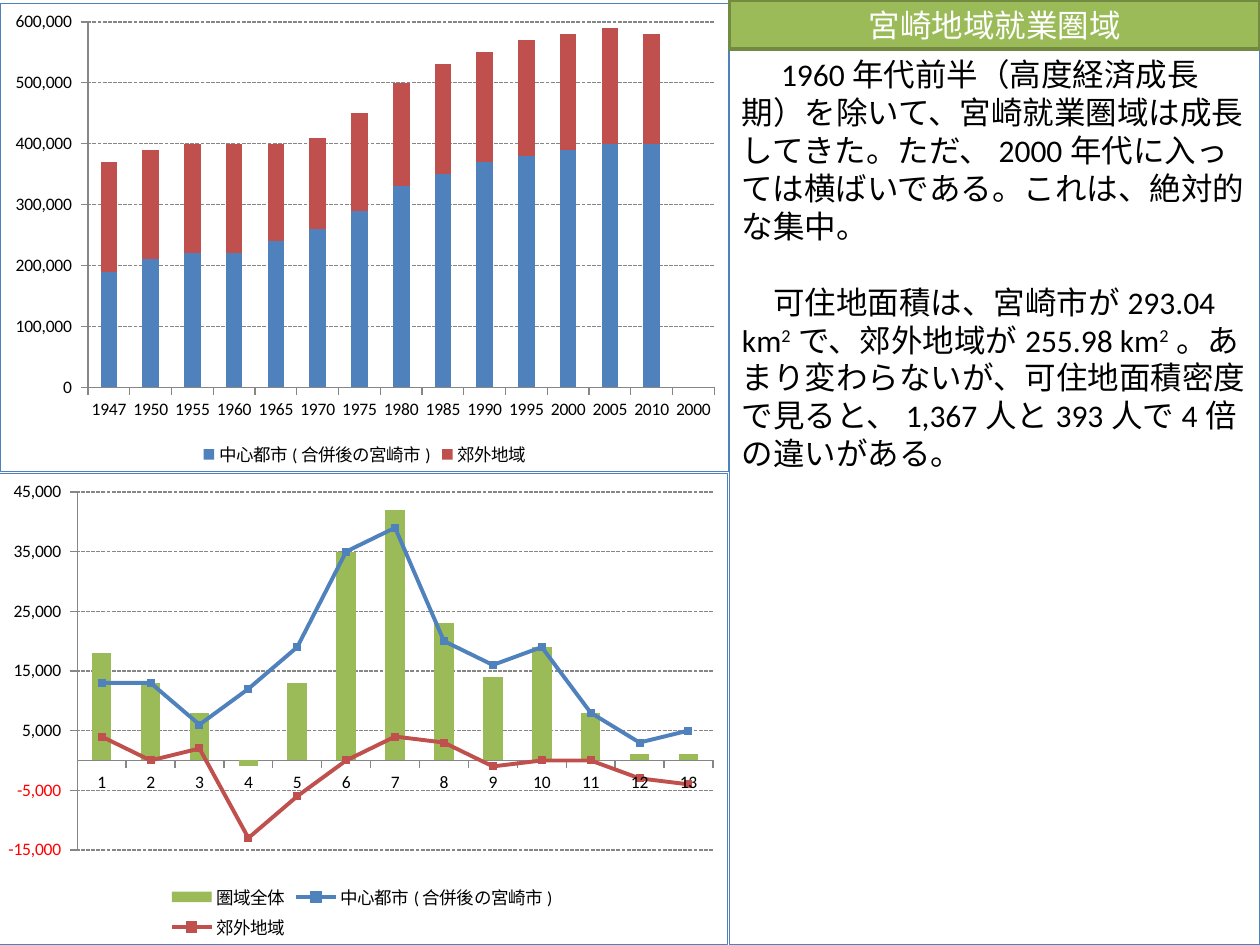
import pptx
import pptx.chart.data
import pptx.dml.color
import pptx.enum.chart
import pptx.enum.dml
import pptx.enum.shapes
import pptx.enum.text
import pptx.oxml
import pptx.oxml.ns
import pptx.util
from pptx.util import Inches

RGB = pptx.dml.color.RGBColor
BLUE = RGB(0x4F, 0x81, 0xBD)
RED = RGB(0xC0, 0x50, 0x4D)
GREEN = RGB(0x9B, 0xBB, 0x59)
DARK_GREEN = RGB(0x73, 0x8A, 0x42)
GRAY = RGB(0x86, 0x86, 0x86)
BLACK = RGB(0, 0, 0)
WHITE = RGB(0xFF, 0xFF, 0xFF)
FONT = "Calibri"
qn = pptx.oxml.ns.qn

SPLIT = 5.79  # left edge of the text column
TITLE_H = 0.39
CITY, SUBURB, REGION = "中心都市(合併後の宮崎市)", "郊外地域", "圏域全体"

YEARS = ["1947", "1950", "1955", "1960", "1965", "1970", "1975", "1980",
         "1985", "1990", "1995", "2000", "2005", "2010", "2000"]
POPULATION = {  # thousands of people
    CITY: [190, 210, 220, 220, 240, 260, 290, 330, 350, 370, 380, 390, 400, 400, None],
    SUBURB: [180, 180, 180, 180, 160, 150, 160, 170, 180, 180, 190, 190, 190, 180, None],
}
CHANGE = {  # thousands of people
    REGION: [18, 13, 8, -1, 13, 35, 42, 23, 14, 19, 8, 1, 1],
    CITY: [13, 13, 6, 12, 19, 35, 39, 20, 16, 19, 8, 3, 5],
    SUBURB: [4, 0, 2, -13, -6, 0, 4, 3, -1, 0, 0, -3, -4],
}


def c_xml(body):
    """Parse a chart fragment whose root tag carries the namespaces."""
    tag, rest = body.split(">", 1)
    return pptx.oxml.parse_xml(f"{tag} {pptx.oxml.ns.nsdecls('c', 'a')}>{rest}")


def add_text(p, text, size=18, color=BLACK, superscript=False):
    r = p.add_run()
    r.text = text
    r.font.size = pptx.util.Pt(size)
    r.font.name = FONT
    r.font.color.rgb = color
    if superscript:
        r.font._element.set("baseline", "30000")


def style_box(sp, fill, line, width):
    sp.fill.solid()
    sp.fill.fore_color.rgb = fill
    sp.line.color.rgb = line
    sp.line.width = pptx.util.Pt(width)


def add_title(s, text):
    sp = s.shapes.title
    sp.left, sp.top = Inches(SPLIT), Inches(0)
    sp.width, sp.height = Inches(10 - SPLIT), Inches(TITLE_H)
    style_box(sp, GREEN, DARK_GREEN, 2)
    tf = sp.text_frame
    tf.auto_size = pptx.enum.text.MSO_AUTO_SIZE.NONE
    tf.vertical_anchor = pptx.enum.text.MSO_ANCHOR.MIDDLE
    tf.paragraphs[0].alignment = pptx.enum.text.PP_ALIGN.CENTER
    add_text(tf.paragraphs[0], text, color=WHITE)
    # The title's border lies over the text column
    sp.element.getparent().append(sp.element)


def add_body(s, paragraphs):
    """Each paragraph is a list of texts, every second one superscript."""
    sp = s.shapes.add_shape(pptx.enum.shapes.MSO_SHAPE.RECTANGLE,
                            Inches(SPLIT), Inches(TITLE_H),
                            Inches(10 - SPLIT), Inches(7.5 - TITLE_H))
    sp.shadow.inherit = False
    style_box(sp, WHITE, BLUE, 0.75)
    tf = sp.text_frame
    tf.word_wrap = True
    tf.vertical_anchor = pptx.enum.text.MSO_ANCHOR.TOP
    for i, texts in enumerate(paragraphs):
        p = tf.add_paragraph() if i else tf.paragraphs[0]
        p.alignment = pptx.enum.text.PP_ALIGN.LEFT
        p.space_before = pptx.util.Pt(22 if i else 0)
        for j, text in enumerate(texts):
            add_text(p, text, superscript=j % 2 == 1)


def add_bar_chart(s, kind, box, cats, series, plot_box, limits, unit, fmt):
    data = pptx.chart.data.CategoryChartData(number_format=fmt)
    data.categories = cats
    for name, vals in series.items():
        data.add_series(name, [None if v is None else v * 1000 for v in vals])
    chart = s.shapes.add_chart(kind, *map(Inches, box), data).chart
    chart.has_title = False
    chart.font.size = pptx.util.Pt(10)
    chart.font.name = FONT
    chart.font.color.rgb = BLACK
    chart.has_legend = True
    chart.legend.position = pptx.enum.chart.XL_LEGEND_POSITION.BOTTOM
    chart.legend.include_in_layout = False
    chart.plots[0].gap_width = 150
    chart.plots[0].vary_by_categories = False

    # Axes and gridlines
    val = chart.value_axis
    val.minimum_scale, val.maximum_scale = limits
    val.major_unit = unit
    val.tick_labels.number_format = fmt
    val.tick_labels.number_format_is_linked = False
    for axis in (val, chart.category_axis):
        axis.major_tick_mark = pptx.enum.chart.XL_TICK_MARK.OUTSIDE
        axis.format.line.color.rgb = GRAY
        axis.format.line.width = pptx.util.Pt(0.75)
    grid = val.major_gridlines.format.line
    grid.color.rgb = GRAY
    grid.width = pptx.util.Pt(0.75)
    grid.dash_style = pptx.enum.dml.MSO_LINE.SQUARE_DOT

    # Plot area position, as fractions of the chart
    area = chart.element.find(".//" + qn("c:plotArea"))
    for old in area.findall(qn("c:layout")):
        area.remove(old)
    sizes = "".join(f'<c:{k} val="{v}"/>' for k, v in zip("xywh", plot_box))
    area.insert(0, c_xml(
        '<c:layout><c:manualLayout><c:layoutTarget val="inner"/>'
        '<c:xMode val="edge"/><c:yMode val="edge"/>'
        f"{sizes}</c:manualLayout></c:layout>"))

    # Frame
    chart.element.find(qn("c:chart")).addnext(c_xml(
        f'<c:spPr><a:solidFill><a:srgbClr val="{WHITE}"/></a:solidFill>'
        f'<a:ln w="9525"><a:solidFill><a:srgbClr val="{BLUE}"/>'
        "</a:solidFill></a:ln></c:spPr>"))
    return chart


def fill_bars(chart, colors):
    for ser, color in zip(chart.plots[0].series, colors):
        ser.format.fill.solid()
        ser.format.fill.fore_color.rgb = color
        ser.invert_if_negative = False


def turn_into_lines(chart, colors):
    """Move every series after the first to a line plot on the same axes."""
    bar = chart.element.find(".//" + qn("c:barChart"))
    ids = "".join(f'<c:axId val="{a.get("val")}"/>' for a in bar.findall(qn("c:axId")))
    line = c_xml('<c:lineChart><c:grouping val="standard"/><c:varyColors val="0"/>'
                 f'<c:marker val="1"/>{ids}</c:lineChart>')
    bar.addnext(line)
    for ser in bar.findall(qn("c:ser"))[1:]:
        for flag in ser.findall(qn("c:invertIfNegative")):
            ser.remove(flag)
        line.find(qn("c:marker")).addprevious(ser)
    for ser, color in zip(chart.plots[1].series, colors):
        ser.smooth = False
        ser.format.line.color.rgb = color
        ser.format.line.width = pptx.util.Pt(2.25)
        ser.marker.style = pptx.enum.chart.XL_MARKER_STYLE.SQUARE
        ser.marker.size = 4
        ser.marker.format.fill.solid()
        ser.marker.format.fill.fore_color.rgb = color
        ser.marker.format.line.color.rgb = color


def main():
    prs = pptx.Presentation()
    prs.slide_width, prs.slide_height = Inches(10), Inches(7.5)
    s = prs.slides.add_slide(prs.slide_layouts[5])
    kinds = pptx.enum.chart.XL_CHART_TYPE

    # Text column
    add_body(s, [
        ["　1960年代前半（高度経済成長期）を除いて、宮崎就業圏域は成長してきた。"
         "ただ、2000年代に入っては横ばいである。これは、絶対的な集中。"],
        ["　可住地面積は、宮崎市が293.04 km", "2", "で、郊外地域が255.98 km", "2",
         "。あまり変わらないが、可住地面積密度で見ると、1,367人と393人で4倍の違いがある。"],
    ])

    # Population by year
    population = add_bar_chart(
        s, kinds.COLUMN_STACKED, (0, 0.02, SPLIT, 3.73), YEARS, POPULATION,
        (0.12, 0.04, 0.86, 0.78), (0, 600000), 100000, r"#,##0_);[Red]\(#,##0\)")
    population.plots[0].overlap = 100
    fill_bars(population, [BLUE, RED])

    # Change between years
    change = add_bar_chart(
        s, kinds.COLUMN_CLUSTERED, (-0.03, 3.75, 5.81, 3.75),
        [str(n) for n in range(1, 14)], CHANGE,
        (0.11, 0.04, 0.87, 0.76), (-15000, 45000), 10000, r"#,##0_ ;[Red]\-#,##0\ ")
    turn_into_lines(change, [BLUE, RED])
    fill_bars(change, [GREEN])

    add_title(s, "宮崎地域就業圏域")
    prs.save("out.pptx")


if __name__ == "__main__":
    main()
